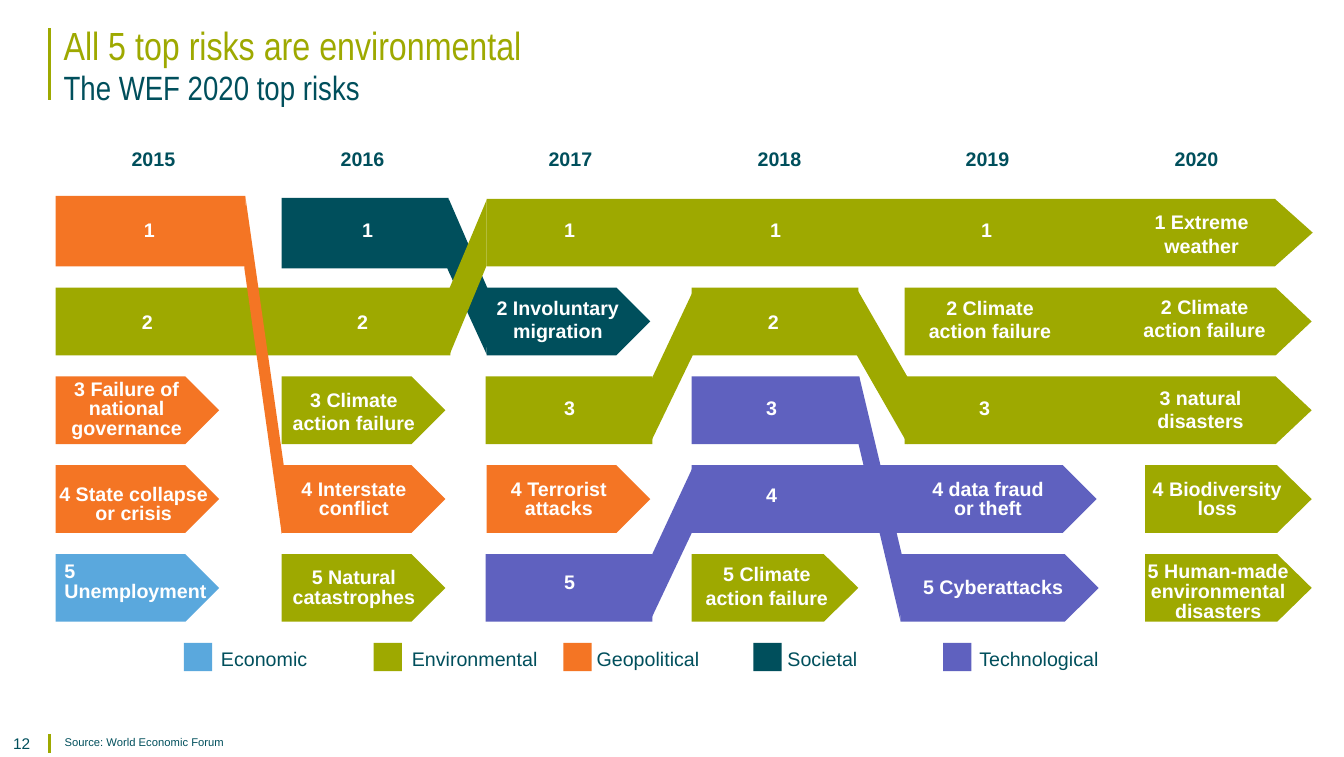
"""Build the slide on the top global risks, 2015 to 2020."""
from lxml import etree
from pptx import Presentation
from pptx import util as u
from pptx.dml.color import RGBColor
from pptx.enum import shapes, text
from pptx.oxml import ns

PX = 9144
GREEN = RGBColor(0x9E, 0xA9, 0x00)
TEAL = RGBColor(0x00, 0x4F, 0x5C)
ORANGE = RGBColor(0xF4, 0x75, 0x24)
BLUE = RGBColor(0x5A, 0xA8, 0xDD)
PURPLE = RGBColor(0x5F, 0x61, 0xBF)
WHITE = RGBColor(0xFF, 0xFF, 0xFF)

deck = Presentation()
deck.slide_width, deck.slide_height = 1331 * PX, 750 * PX
slide = deck.slides.add_slide(deck.slide_layouts[6])


def write(words, left, top, width, height, size=14, font="Arial", color=TEAL, bold=False,
          align=text.PP_ALIGN.LEFT, anchor=text.MSO_ANCHOR.TOP, leading=None, inset=(10, 5)):
    box = slide.shapes.add_textbox(left * PX, top * PX, width * PX, height * PX)
    frame = box.text_frame
    frame.word_wrap = True
    frame.vertical_anchor = anchor
    frame.margin_left = frame.margin_right = inset[0] * PX
    frame.margin_top = frame.margin_bottom = inset[1] * PX
    frame.text = words
    for line in frame.paragraphs:
        line.alignment = align
        if leading:
            line.line_spacing = u.Pt(leading)
        for run in line.runs:
            run.font.size = u.Pt(size)
            run.font.name = font
            run.font.bold = bold
            run.font.color.rgb = color


def paint(shape, color):
    shape.shadow.inherit = False
    shape.fill.solid()
    shape.fill.fore_color.rgb = color
    shape.line.fill.background()


for top, bottom in ((28, 99), (727, 746)):
    accent = slide.shapes.add_connector(shapes.MSO_CONNECTOR.STRAIGHT,
                                        49 * PX, top * PX, 49 * PX, bottom * PX)
    accent.line.color.rgb = GREEN
    accent.line.width = u.Pt(1.5)
    etree.SubElement(accent._element.spPr, ns.qn("a:effectLst"))

write("All 5 top risks are environmental", 50, 0, 1237, 89, size=28, font="Arial Narrow",
      color=GREEN, anchor=text.MSO_ANCHOR.MIDDLE, inset=(13, 7))
write("The WEF 2020 top risks", 50, 59, 1237, 50, size=24, font="Arial Narrow", inset=(13, 7))
write("12", 0, 720, 256, 21, size=11, inset=(13, 7))
write("Source: World Economic Forum", 51, 722, 1076, 31, size=8, inset=(13, 7))

for column in range(6):
    write(str(2015 + column), 102 + round(206.6 * column), 141, 100, 34,
          bold=True, align=text.PP_ALIGN.CENTER)

starts = [(55, 194, 188, ORANGE), (279, 196, 165, TEAL)]
for left, top, width, color in starts:
    start = slide.shapes.add_shape(shapes.MSO_SHAPE.RECTANGLE,
                                   left * PX, top * PX, width * PX, 70 * PX)
    paint(start, color)

# left, rank, width, color, depth of the arrow point
bands = [
    (482, 1, 818, GREEN, 0.56),
    (55, 2, 391, GREEN, 0), (482, 2, 162, TEAL, 0.5), (685, 2, 165, GREEN, 0),
    (896, 2, 403, GREEN, 0.53),
    (55, 3, 162, ORANGE, 0.5), (279, 3, 162, GREEN, 0.5), (481, 3, 165, GREEN, 0),
    (685, 3, 166, PURPLE, 0), (896, 3, 403, GREEN, 0.53),
    (55, 4, 162, ORANGE, 0.5), (279, 4, 162, ORANGE, 0.5), (482, 4, 162, ORANGE, 0.5),
    (685, 4, 401, PURPLE, 0.5), (1134, 4, 165, GREEN, 0.51),
    (55, 5, 162, BLUE, 0.5), (279, 5, 162, GREEN, 0.5), (481, 5, 165, PURPLE, 0),
    (685, 5, 165, GREEN, 0.51), (892, 5, 196, PURPLE, 0.5), (1134, 5, 165, GREEN, 0.51),
]
for left, rank, width, color, point in bands:
    band = slide.shapes.add_shape(shapes.MSO_SHAPE.PENTAGON, left * PX,
                                  (109 + 88 * rank) * PX, width * PX, 67 * PX)
    band.adjustments[0] = point
    paint(band, color)

links = [
    (ORANGE, (242, 266), (279, 529), (281, 461), (243, 195)),
    (TEAL, (443, 266), (482, 351), (483, 286), (444, 196)),
    (GREEN, (445, 352), (482, 263), (482, 198), (445, 286)),
    (GREEN, (644, 439), (687, 350), (687, 287), (646, 374)),
    (GREEN, (848, 351), (899, 440), (899, 374), (849, 287)),
    (PURPLE, (644, 615), (687, 524), (687, 461), (646, 549)),
    (PURPLE, (850, 439), (892, 616), (893, 549), (851, 373)),
]
for color, first, *others in links:
    outline = slide.shapes.build_freeform(*first, scale=PX)
    outline.add_line_segments(others, close=True)
    paint(outline.convert_to_shape(), color)

rank_tops = {1: 211, 2: 302, 3: 387, 4: 474, 5: 560}
rank_centers = {1: (148, 364, 564, 768, 977), 2: (146, 359, 766), 3: (564, 764, 975),
                4: (764,), 5: (564,)}
for rank, centers in rank_centers.items():
    for center in centers:
        write(str(rank), center - 25, rank_tops[rank], 50, 37, color=WHITE, bold=True,
              align=text.PP_ALIGN.CENTER)

risks = [
    ("1 Extreme\nweather", 1111, 203, 158, None),
    ("2 Involuntary\vmigration", 472, 288, 161, None),
    ("2 Climate action failure", 900, 288, 161, None),
    ("2 Climate action failure", 1114, 287, 158, None),
    ("3 Failure of national governance", 39, 372, 173, 14),
    ("3 Climate action failure", 270, 379, 161, None),
    ("3 natural disasters", 1109, 377, 160, None),
    ("4 State collapse or crisis", 46, 476, 173, 14),
    ("4 Interstate conflict", 264, 471, 173, 14),
    ("4 Terrorist attacks", 467, 471, 173, 14),
    ("4 data fraud\vor theft", 892, 471, 173, 14),
    ("4 Biodiversity loss", 1119, 471, 173, 14),
    ("5 Natural catastrophes", 264, 559, 173, 14),
    ("5 Climate action failure", 679, 552, 161, None),
    ("5 Cyberattacks", 903, 565, 161, None),
    ("5 Human-made environmental disasters", 1126, 553, 161, 14),
]
for risk, left, top, width, leading in risks:
    write(risk, left, top, width, 64, color=WHITE, bold=True,
          align=text.PP_ALIGN.CENTER, leading=leading)
write("5 Unemployment", 54, 553, 173, 55, color=WHITE, bold=True, leading=14)

legend = [("Economic", BLUE, 209), ("Environmental", GREEN, 398), ("Geopolitical", ORANGE, 581),
          ("Societal", TEAL, 770), ("Technological", PURPLE, 960)]
for place, (category, color, left) in enumerate(legend):
    swatch = slide.shapes.add_shape(shapes.MSO_SHAPE.RECTANGLE, (182 + 188 * place) * PX,
                                    637 * PX, 28 * PX, 28 * PX)
    paint(swatch, color)
    write(category, left, 636, 150, 34)

deck.save("out.pptx")
